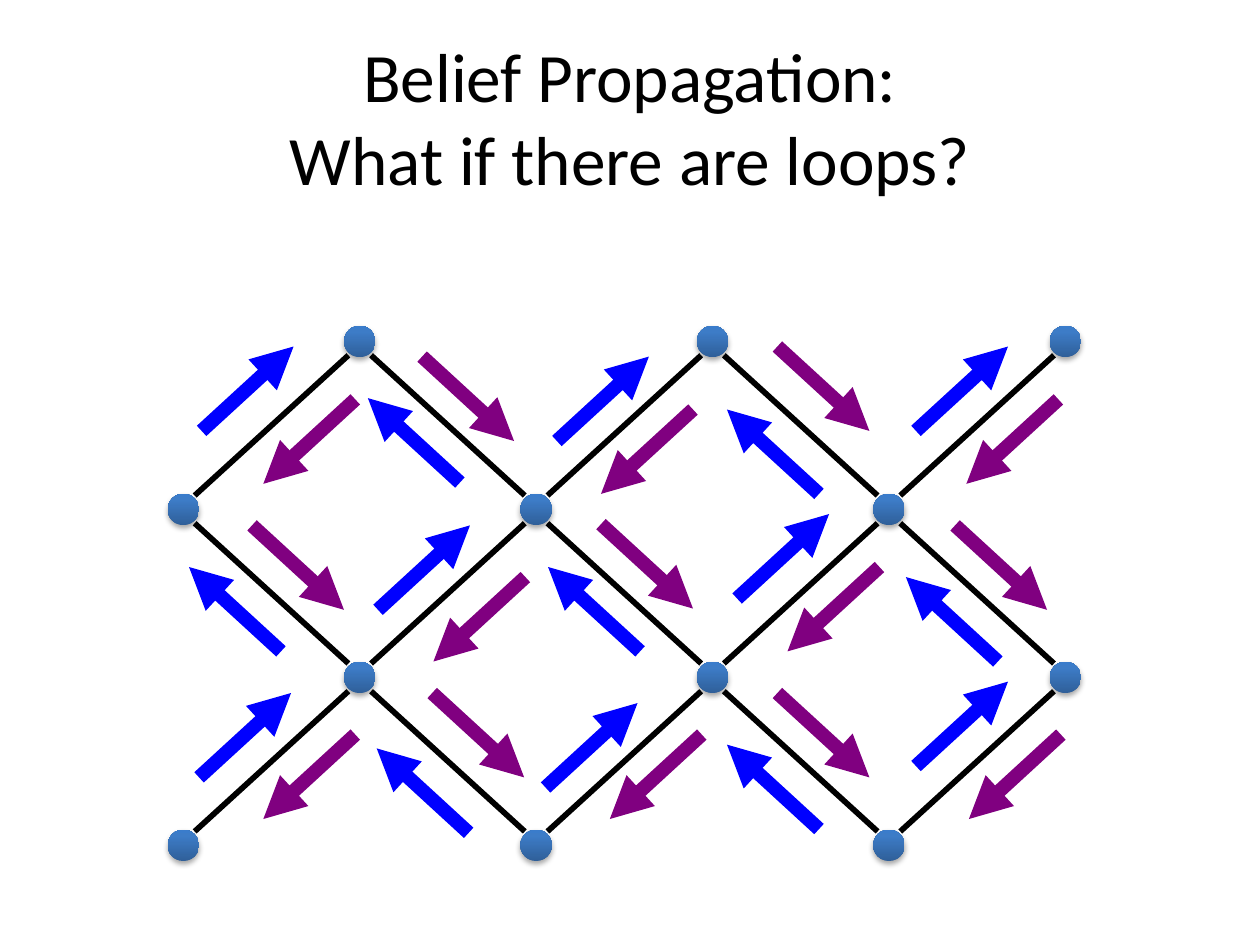
from copy import deepcopy
from itertools import product
from typing import NamedTuple

from pptx import Presentation
from pptx.dml.color import RGBColor
from pptx.enum.shapes import MSO_CONNECTOR, MSO_SHAPE
from pptx.enum.text import MSO_ANCHOR, MSO_AUTO_SIZE, PP_ALIGN
from pptx.oxml import parse_xml
from pptx.oxml.ns import nsdecls, qn
from pptx.oxml.xmlchemy import OxmlElement
from pptx.util import Inches, Pt

COLUMNS, ROWS = 6, 4
LEFT, TOP = 1.455, 2.71
COLUMN_STEP, ROW_STEP = 1.4, 1.333
NODE_SIZE = 0.25
EDGE_GAP_X, EDGE_GAP_Y = 0.09, 0.11
MESSAGE_WIDTH, MESSAGE_HEIGHT = 0.73, 0.67
BLACK, PURPLE, BLUE = "000000", "800080", "0000FF"
NODE_STOPS = ((0, "2F5F99"), (0.8, "3D7CC7"), (1, "3A7CCB"))


class Point(NamedTuple):
    x: float
    y: float


class Messages(NamedTuple):
    """Parallel arrows; right and down are +1 or -1."""
    color: str
    right: int
    down: int
    starts: tuple[tuple[float, float], ...]


MESSAGES = (
    Messages(PURPLE, -1, 1, (
        (2.82, 3.17), (5.5, 3.25), (8.4, 3.17), (4.17, 4.58),
        (6.98, 4.5), (2.82, 5.83), (5.57, 5.83), (8.42, 5.83))),
    Messages(PURPLE, 1, 1, (
        (3.35, 2.83), (6.17, 2.75), (2, 4.17), (4.77, 4.16),
        (7.58, 4.17), (3.43, 5.5), (6.17, 5.5))),
    Messages(BLUE, 1, -1, (
        (1.6, 3.42), (4.42, 3.5), (7.27, 3.42), (3, 4.84),
        (5.85, 4.75), (1.58, 6.17), (4.33, 6.25), (7.27, 6.08))),
    Messages(BLUE, -1, -1, (
        (3.65, 3.83), (6.5, 3.92), (2.23, 5.17), (5.08, 5.17),
        (7.92, 5.25), (3.72, 6.61), (6.5, 6.58))),
)


def rgb(color: str) -> RGBColor:
    return RGBColor.from_string(color)


def node_center(column: int, row: int) -> Point:
    return Point(LEFT + column * COLUMN_STEP, TOP + row * ROW_STEP)


def add_title(page, text: str) -> None:
    title = page.shapes.title
    title.left, title.top = Inches(0.5), Inches(0.3)
    title.width, title.height = Inches(9), Inches(1.25)
    frame = title.text_frame
    frame.text = text
    frame.auto_size = MSO_AUTO_SIZE.NONE
    frame.vertical_anchor = MSO_ANCHOR.MIDDLE
    para = frame.paragraphs[0]
    para.alignment = PP_ALIGN.CENTER
    para.font.name, para.font.size = "Calibri", Pt(39.6)
    para.font.color.rgb = rgb(BLACK)


def add_line(page, start: Point, end: Point, color: str, width: float,
             arrow: bool = False) -> None:
    line = page.shapes.add_connector(
        MSO_CONNECTOR.STRAIGHT, Inches(start.x), Inches(start.y),
        Inches(end.x), Inches(end.y))
    line.line.color.rgb = rgb(color)
    line.line.width = Pt(width)
    properties = line._element.spPr
    if arrow:
        tip = OxmlElement("a:tailEnd")
        tip.set("type", "triangle")
        properties.find(qn("a:ln")).append(tip)
    properties.append(OxmlElement("a:effectLst"))


def add_node(page, center: Point) -> None:
    """Draw a shaded ball with a soft shadow below it."""
    node = page.shapes.add_shape(
        MSO_SHAPE.OVAL, Inches(center.x - NODE_SIZE / 2),
        Inches(center.y - NODE_SIZE / 2), Inches(NODE_SIZE), Inches(NODE_SIZE))
    node.fill.gradient()
    node.fill.gradient_angle = 90
    properties = node._element.spPr
    stop_list = properties.find(".//" + qn("a:gsLst"))
    stop_list.append(deepcopy(stop_list[-1]))
    for stop, (position, color) in zip(node.fill.gradient_stops, NODE_STOPS):
        stop.position = position
        stop.color.rgb = rgb(color)
    node.line.fill.background()
    node.shadow.inherit = False
    properties.find(qn("a:effectLst")).append(parse_xml(
        f'<a:outerShdw {nsdecls("a")} blurRad="40000" dist="23000" '
        'dir="5400000" rotWithShape="0"><a:srgbClr val="000000">'
        '<a:alpha val="35000"/></a:srgbClr></a:outerShdw>'))


def add_lattice(page) -> None:
    """Put nodes on alternate grid points and join diagonal neighbours."""
    nodes = [(column, row) for row, column in product(range(ROWS), range(COLUMNS))
             if (column + row) % 2]
    for (column, row), side in product(nodes, (-1, 1)):
        neighbour = (column + side, row + 1)
        if neighbour in nodes:
            upper, lower = node_center(column, row), node_center(*neighbour)
            add_line(page,
                     Point(upper.x + side * EDGE_GAP_X, upper.y + EDGE_GAP_Y),
                     Point(lower.x - side * EDGE_GAP_X, lower.y - EDGE_GAP_Y),
                     BLACK, 3.25)
    for node in nodes:
        add_node(page, node_center(*node))


def add_messages(page, group: Messages) -> None:
    for x, y in group.starts:
        end = Point(x + group.right * MESSAGE_WIDTH, y + group.down * MESSAGE_HEIGHT)
        add_line(page, Point(x, y), end, group.color, 8, arrow=True)


def main() -> None:
    deck = Presentation()
    deck.slide_width, deck.slide_height = Inches(10), Inches(7.5)
    page = deck.slides.add_slide(deck.slide_layouts[5])
    add_title(page, "Belief Propagation:\vWhat if there are loops?")
    add_lattice(page)
    for group in MESSAGES:
        add_messages(page, group)
    deck.save("out.pptx")


if __name__ == "__main__":
    main()
